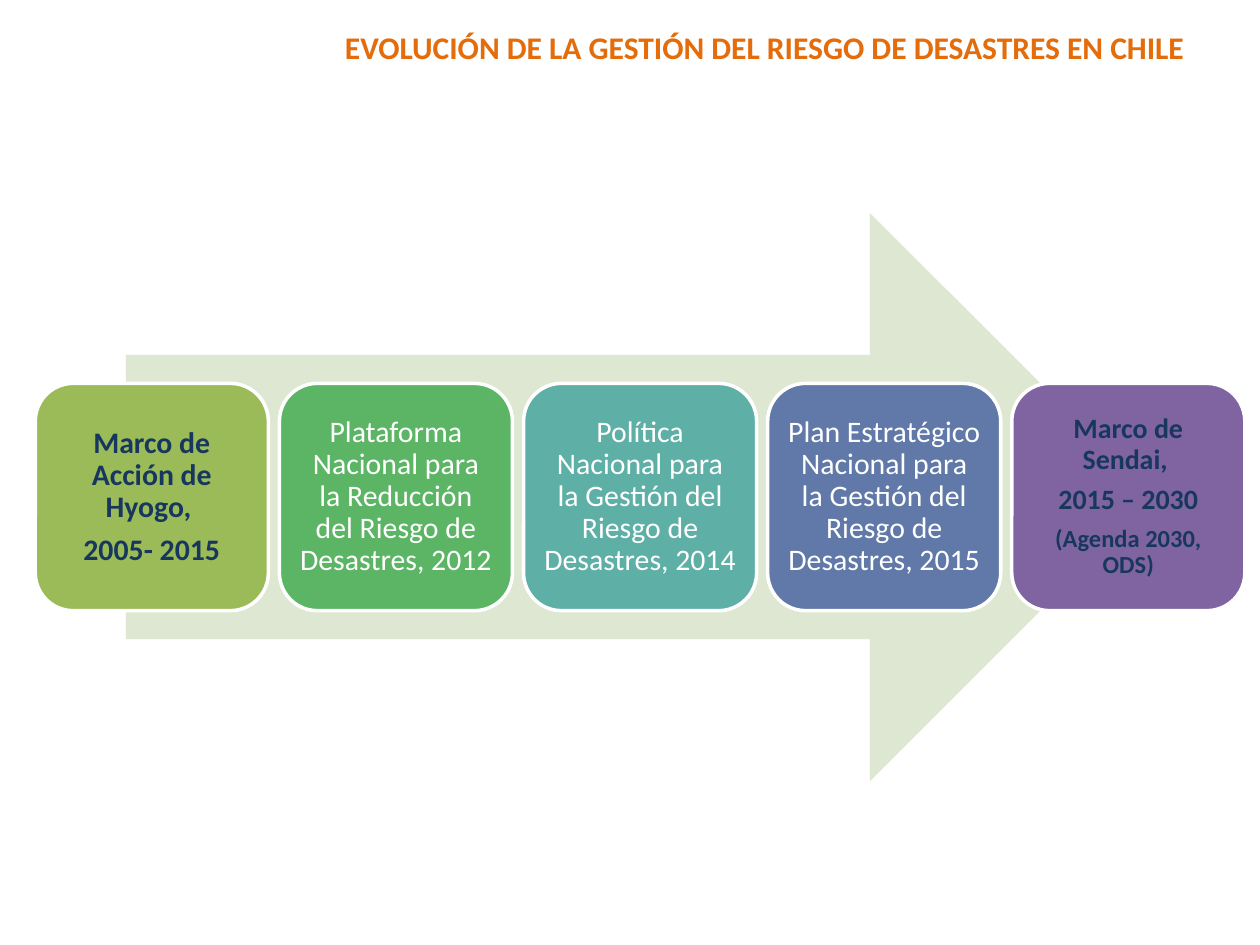
from pptx import Presentation
from pptx import util as u
from pptx.dml.color import RGBColor
from pptx.enum import shapes, text

COLORS = {
    "title": "E46C0A", "arrow": "DEE7D1", "white": "FFFFFF", "navy": "17375E",
    "olive": "9BBB59", "green": "5CB565", "teal": "5EAFA6",
    "blue": "6179A8", "purple": "8064A2",
}

# Each step: fill, text colour, bold, paragraphs with their sizes
STEPS = [
    ("olive", "navy", True, [("Marco de Acción de Hyogo, ", 17), ("2005- 2015", 17)]),
    ("green", "white", False,
     [("Plataforma Nacional para la Reducción del Riesgo de Desastres, 2012", 17)]),
    ("teal", "white", False,
     [("Política Nacional para la Gestión del Riesgo de Desastres, 2014", 17)]),
    ("blue", "white", False,
     [("Plan Estratégico Nacional para la Gestión del Riesgo de Desastres, 2015", 17)]),
    ("purple", "navy", True,
     [("Marco de Sendai, ", 16), ("2015 – 2030", 16), ("(Agenda 2030, ODS)", 14)]),
]


def color(name):
    return RGBColor.from_string(COLORS[name])


def write(box, lines, *, ink, bold=False, align=text.PP_ALIGN.CENTER,
          inset=0.07, spacing=0.9, after=0):
    frame = box.text_frame
    frame.word_wrap = True
    frame.vertical_anchor = text.MSO_ANCHOR.MIDDLE
    frame.margin_left = frame.margin_right = u.Inches(inset)
    frame.margin_top = frame.margin_bottom = u.Inches(inset)
    for index, (words, size) in enumerate(lines):
        para = frame.add_paragraph() if index else frame.paragraphs[0]
        para.alignment = align
        para.line_spacing = spacing
        para.space_after = u.Pt(after)
        span = para.add_run()
        span.text = words
        span.font.name = "Calibri"
        span.font.size = u.Pt(size)
        span.font.bold = bold
        span.font.color.rgb = color(ink)


def add_shape(page, kind, left, top, width, height, fill, line=None):
    shape = page.shapes.add_shape(kind, u.Inches(left), u.Inches(top),
                                  u.Inches(width), u.Inches(height))
    shape.shadow.inherit = False
    shape.fill.solid()
    shape.fill.fore_color.rgb = color(fill)
    if line:
        shape.line.color.rgb = color(line)
        shape.line.width = u.Pt(2)
    else:
        shape.line.fill.background()
    return shape


def add_title(page, left, top, width, height):
    box = page.shapes.add_textbox(u.Inches(left), u.Inches(top),
                                  u.Inches(width), u.Inches(height))
    write(box, [("EVOLUCIÓN DE LA GESTIÓN DEL RIESGO DE DESASTRES EN CHILE", 18)],
          ink="title", bold=True, align=text.PP_ALIGN.RIGHT, inset=0.1, spacing=1)


def add_process(page, left, top, width, height):
    # Arrow behind the steps
    arrow_width = 0.85 * width
    add_shape(page, shapes.MSO_SHAPE.RIGHT_ARROW, left + (width - arrow_width) / 2,
              top, arrow_width, height, "arrow")

    # Steps, evenly spread over the width and centred on the arrow
    step_width, step_height = 1.85, 0.4 * height
    pitch = (width - step_width) / (len(STEPS) - 1)
    step_top = top + (height - step_height) / 2
    for index, (fill, ink, bold, lines) in enumerate(STEPS):
        step = add_shape(page, shapes.MSO_SHAPE.ROUNDED_RECTANGLE, left + index * pitch,
                         step_top, step_width, step_height, fill, line="white")
        write(step, lines, ink=ink, bold=bold, after=6)


def main():
    deck = Presentation()
    deck.slide_width, deck.slide_height = u.Inches(10), u.Inches(7.5)
    page = deck.slides.add_slide(deck.slide_layouts[6])
    add_title(page, 2.01, 0.22, 7.49, 0.3)
    add_process(page, 0.28, 1.69, 9.6, 4.51)
    deck.save("out.pptx")


if __name__ == "__main__":
    main()
